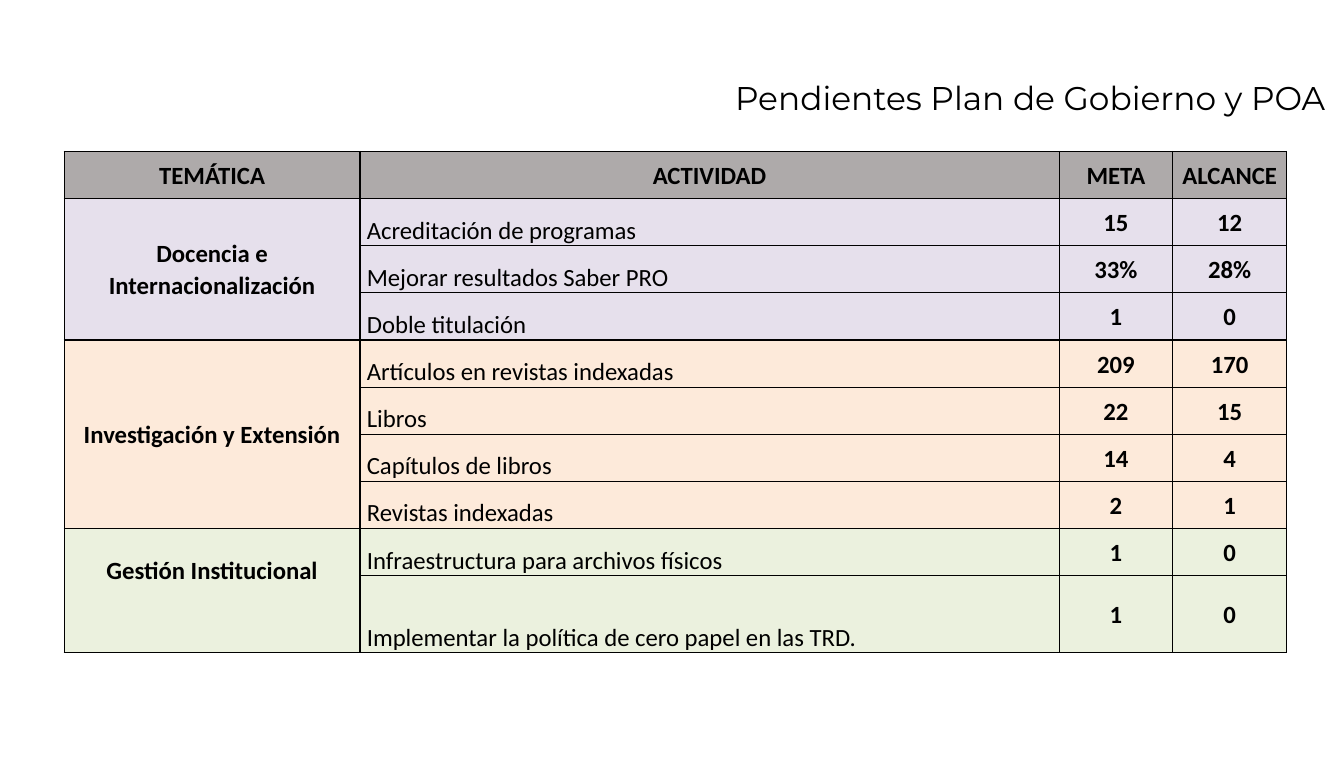
from lxml.etree import SubElement as Sub
from pptx import Presentation
from pptx.dml.color import RGBColor as RGB
from pptx.enum.text import MSO_ANCHOR as Anchor, PP_ALIGN as Align
from pptx.oxml.ns import qn
from pptx.util import Inches, Pt

TITLE = "Pendientes Plan de Gobierno y POA"
HEAD = ("TEMÁTICA", "ACTIVIDAD", "META", "ALCANCE")
# Theme, colour key, room under the theme, then its tasks
THEMES = [
    ("Docencia e Internacionalización", "lilac", 0, [
        ("Acreditación de programas", "15", "12"),
        ("Mejorar resultados Saber PRO", "33%", "28%"),
        ("Doble titulación", "1", "0"),
    ]),
    ("Investigación y Extensión", "peach", 0, [
        ("Artículos en revistas indexadas", "209", "170"),
        ("Libros", "22", "15"),
        ("Capítulos de libros", "14", "4"),
        ("Revistas indexadas", "2", "1"),
    ]),
    ("Gestión Institucional", "green", 0.42, [
        ("Infraestructura para archivos físicos", "1", "0"),
        ("Implementar la política de cero papel en las TRD.", "1", "0"),
    ]),
]
COLORS = {"ink": "000000", "head": "AEAAAA", "lilac": "E6E0EC",
          "peach": "FDEADA", "green": "EBF1DE"}
COLS = (2.99, 7.07, 1.15, 1.15)
LEFT, TOP, HIGH, LAST = 0.65, 1.53, 5.07, 0.78
PARA = {"line_spacing": 1.07, "space_after": Pt(8)}
FONT = {"name": "Calibri", "size": Pt(18)}
TITLE_FONT = {"name": "Montserrat", "size": Pt(23.9), "bold": False}


def apply(thing, form):
    for key, value in form.items():
        setattr(thing, key, value)


def style(font, form):
    apply(font, form)
    font.color.rgb = RGB.from_string(COLORS["ink"])


def frame(cell):
    """Draw a thin line on all four sides of a cell."""
    props = cell._tc.get_or_add_tcPr()
    for side in ("a:lnL", "a:lnR", "a:lnT", "a:lnB"):
        line = Sub(props, qn(side), w=str(Pt(1)))
        Sub(Sub(line, qn("a:solidFill")), qn("a:srgbClr"), val=COLORS["ink"])


def fill_cell(cell, text, color, task=False, under=0):
    """Write one cell; a task is plain text at the bottom left."""
    frame(cell)
    cell.fill.solid()
    cell.fill.fore_color.rgb = RGB.from_string(COLORS[color])
    apply(cell, {
        "text": text,
        "margin_left": Inches(0.07), "margin_right": Inches(0.07),
        "margin_top": 0, "margin_bottom": Inches(under),
        "vertical_anchor": Anchor.BOTTOM if task else Anchor.MIDDLE,
    })
    para = cell.text_frame.paragraphs[0]
    apply(para, {**PARA, "alignment": Align.LEFT if task else Align.CENTER})
    style(para.font, {**FONT, "bold": not task})


def add_title(slide):
    box = slide.shapes.add_textbox(
        Inches(0.59), Inches(0.74), Inches(12.91), Inches(0.5))
    box.text_frame.word_wrap = True
    para = box.text_frame.paragraphs[0]
    para.text = TITLE
    para.alignment = Align.RIGHT
    style(para.font, TITLE_FONT)


def add_grid(slide):
    count = 1 + sum(len(tasks) for *_, tasks in THEMES)
    grid = slide.shapes.add_table(
        count, len(COLS), Inches(LEFT), Inches(TOP),
        Inches(sum(COLS)), Inches(HIGH)).table
    for col, wide in zip(grid.columns, COLS):
        col.width = Inches(wide)
    for row in grid.rows:
        row.height = Inches((HIGH - LAST) / (count - 1))
    grid.rows[count - 1].height = Inches(LAST)

    for col, text in enumerate(HEAD):
        fill_cell(grid.cell(0, col), text, "head")
    row = 1
    for theme, color, under, tasks in THEMES:
        first = row
        for task in tasks:
            label = theme if row == first else ""
            fill_cell(grid.cell(row, 0), label, color, under=under)
            for col, text in enumerate(task, 1):
                fill_cell(grid.cell(row, col), text, color, task=col == 1)
            row += 1
        grid.cell(first, 0).merge(grid.cell(row - 1, 0))


def main():
    deck = Presentation()
    deck.slide_width, deck.slide_height = Inches(13.59), Inches(7.68)
    slide = deck.slides.add_slide(deck.slide_layouts[6])
    add_title(slide)
    add_grid(slide)
    deck.save("out.pptx")


if __name__ == "__main__":
    main()
